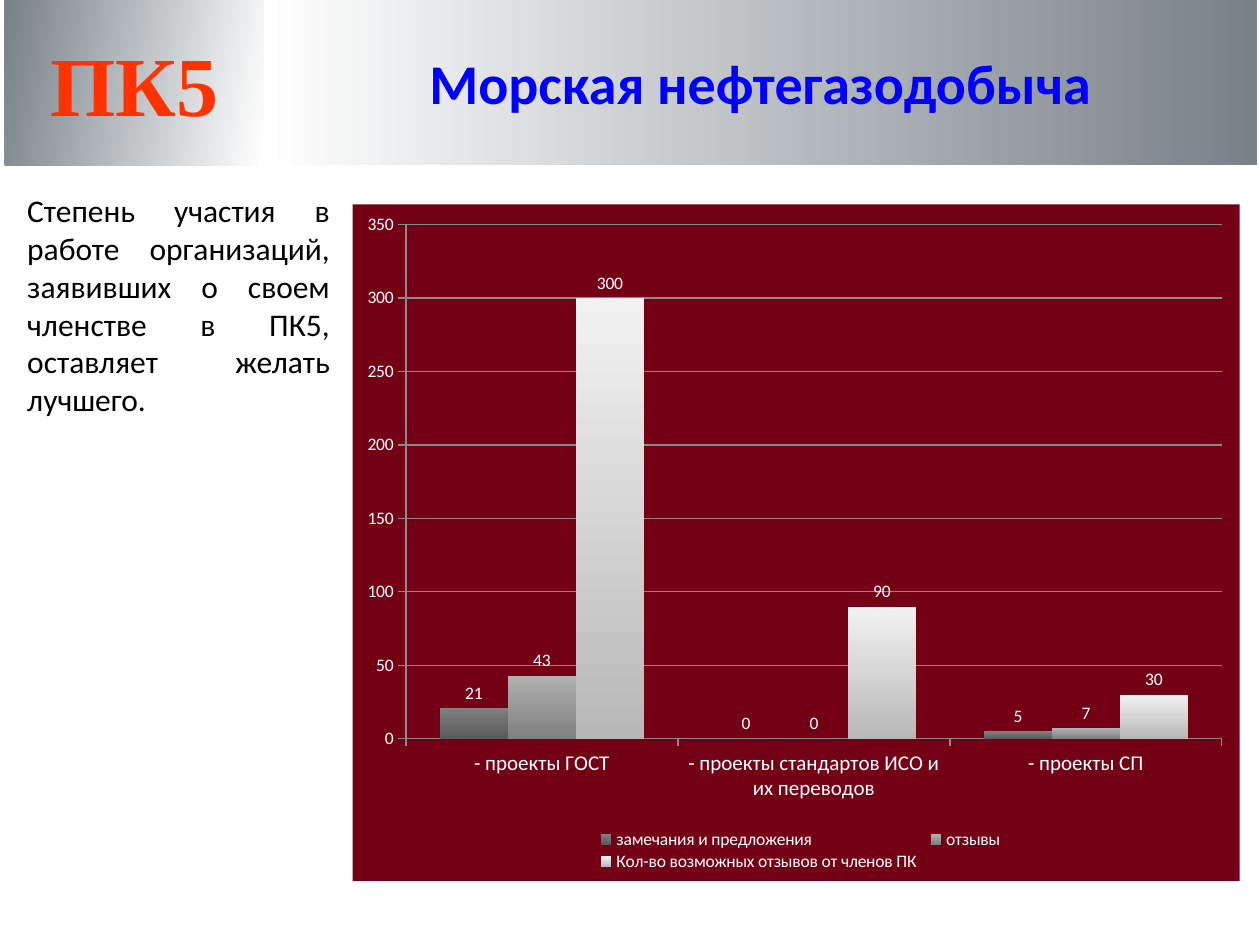
from lxml import etree
from pptx import Presentation
from pptx import util as u
from pptx.chart.data import CategoryChartData
from pptx.dml.color import RGBColor
from pptx.enum import chart as charts, shapes, text
from pptx.oxml import parse_xml
from pptx.oxml.ns import nsdecls

COLORS = {
    "white": "FFFFFF", "steel": "788188", "orange": "FF3300", "blue": "0000FF",
    "black": "000000", "maroon": "740016", "grid": "8A8A8A",
}
CATEGORIES = ["- проекты ГОСТ", "- проекты стандартов ИСО и их переводов", "- проекты СП"]
SERIES = [
    ("замечания и предложения", (21, 0, 5), ("808080", "5A5A5A")),
    ("отзывы", (43, 0, 7), ("B0B0B0", "808080")),
    ("Кол-во возможных отзывов от членов ПК", (300, 90, 30), ("F2F2F2", "B8B8B8")),
]
HEADER_HEIGHT = u.Cm(3.33)


def rgb(value):
    """Return the colour for a hex string."""
    return RGBColor.from_string(value)


def fill_gradient(fill, start, end, angle):
    """Apply a two-stop linear gradient."""
    fill.gradient()
    fill.gradient_angle = angle
    for stop, color in zip(fill.gradient_stops, (start, end)):
        stop.color.rgb = rgb(color)


def write_text(shape, content, size, color, font="Calibri", bold=False,
               align=text.PP_ALIGN.CENTER, anchor=text.MSO_ANCHOR.MIDDLE):
    """Write one formatted paragraph into a shape."""
    frame = shape.text_frame
    frame.word_wrap = True
    frame.auto_size = text.MSO_AUTO_SIZE.NONE
    frame.vertical_anchor = anchor
    paragraph = frame.paragraphs[0]
    paragraph.alignment = align
    run = paragraph.add_run()
    run.text = content
    run.font.size = u.Pt(size)
    run.font.name = font
    run.font.bold = bold
    run.font.color.rgb = rgb(color)


def add_badge(slide):
    """Add the committee badge at the left of the header."""
    badge = slide.shapes.add_shape(
        shapes.MSO_SHAPE.RECTANGLE, u.Cm(0.1), 0, u.Cm(5.21), HEADER_HEIGHT)
    badge.shadow.inherit = False
    badge.line.fill.background()
    fill_gradient(badge.fill, COLORS["white"], COLORS["steel"], 170)
    write_text(badge, "ПК5", 48, COLORS["orange"], font="Times New Roman", bold=True)


def set_title(slide):
    """Place and format the title band."""
    title = slide.shapes.title
    title.left, title.top = u.Cm(5.31), 0
    title.width, title.height = u.Cm(20.04), HEADER_HEIGHT
    fill_gradient(title.fill, COLORS["white"], COLORS["steel"], 0)
    write_text(title, "Морская нефтегазодобыча", 32, COLORS["blue"], bold=True)


def add_comment(slide):
    """Add the justified comment beside the chart."""
    box = slide.shapes.add_textbox(u.Cm(0.3), u.Cm(3.73), u.Cm(6.6), u.Cm(4.88))
    write_text(
        box,
        "Степень участия в работе организаций, заявивших о своем членстве в ПК5, "
        "оставляет желать лучшего.",
        18, COLORS["black"], align=text.PP_ALIGN.JUSTIFY, anchor=text.MSO_ANCHOR.TOP)


def set_layout(element, previous, target, box):
    """Give a chart part a manual layout in fractions of the chart."""
    for old in element.xpath("c:layout"):
        element.remove(old)
    layout = parse_xml(f"<c:layout {nsdecls('c')}><c:manualLayout/></c:layout>")
    entries = [("layoutTarget", "inner")] if target else []
    entries += [("xMode", "edge"), ("yMode", "edge"), *zip("xywh", box)]
    namespace = etree.QName(layout).namespace
    for name, value in entries:
        etree.SubElement(layout[0], f"{{{namespace}}}{name}").set("val", str(value))
    if previous is None:
        element.insert(0, layout)
    else:
        previous.addnext(layout)


def chart_background():
    """Return shape properties with the chart's solid fill."""
    return parse_xml(
        f"<c:spPr {nsdecls('c', 'a')}><a:solidFill><a:srgbClr val=\"{COLORS['maroon']}\"/>"
        "</a:solidFill><a:ln><a:noFill/></a:ln></c:spPr>")


def format_axis(axis, size):
    """Format an axis line, its ticks and its labels."""
    axis.major_tick_mark = charts.XL_TICK_MARK.OUTSIDE
    axis.minor_tick_mark = charts.XL_TICK_MARK.NONE
    axis.format.line.color.rgb = rgb(COLORS["grid"])
    axis.tick_labels.font.size = u.Pt(size)
    axis.tick_labels.font.color.rgb = rgb(COLORS["white"])


def format_plot(plot):
    """Format the columns and their value labels."""
    plot.gap_width = 100
    plot.overlap = 0
    plot.vary_by_categories = False
    for series, (_, _, gradient) in zip(plot.series, SERIES):
        fill_gradient(series.format.fill, *gradient, 270)
        series.invert_if_negative = False
        labels = series.data_labels
        labels.show_value = True
        labels.position = charts.XL_LABEL_POSITION.OUTSIDE_END
        labels.font.size = u.Pt(10)
        labels.font.color.rgb = rgb(COLORS["white"])


def add_participation_chart(slide):
    """Add the column chart of participation."""
    data = CategoryChartData(number_format="0")
    data.categories = CATEGORIES
    for name, values, _ in SERIES:
        data.add_series(name, values)
    chart = slide.shapes.add_chart(
        charts.XL_CHART_TYPE.COLUMN_CLUSTERED,
        u.Cm(7.11), u.Cm(4.12), u.Cm(17.88), u.Cm(13.64), data).chart
    chart.has_title = False
    chart.font.name = "Calibri"
    chart.font.size = u.Pt(10)
    chart.font.color.rgb = rgb(COLORS["white"])
    format_plot(chart.plots[0])
    format_axis(chart.category_axis, 12)
    format_axis(chart.value_axis, 10)
    chart.value_axis.minimum_scale = 0
    chart.value_axis.maximum_scale = 350
    chart.value_axis.major_unit = 50
    chart.value_axis.major_gridlines.format.line.color.rgb = rgb(COLORS["grid"])
    chart.has_legend = True
    chart.legend.position = charts.XL_LEGEND_POSITION.BOTTOM
    chart.legend.include_in_layout = False
    chart.legend.font.size = u.Pt(10)
    chart.legend.font.color.rgb = rgb(COLORS["white"])
    plot_area = chart.element.xpath("c:chart/c:plotArea")[0]
    legend = chart.element.xpath("c:chart/c:legend")[0]
    set_layout(plot_area, None, True, (0.06, 0.03, 0.92, 0.76))
    set_layout(legend, legend.xpath("c:legendPos")[0], False, (0.27, 0.92, 0.47, 0.07))
    plot_area.append(chart_background())
    chart.element.xpath("c:chart")[0].addnext(chart_background())


def main():
    """Build and save the slide."""
    presentation = Presentation()
    presentation.slide_width, presentation.slide_height = u.Cm(25.4), u.Cm(19.05)
    slide = presentation.slides.add_slide(presentation.slide_layouts[5])
    set_title(slide)
    add_badge(slide)
    add_participation_chart(slide)
    add_comment(slide)
    presentation.save("out.pptx")


if __name__ == "__main__":
    main()
